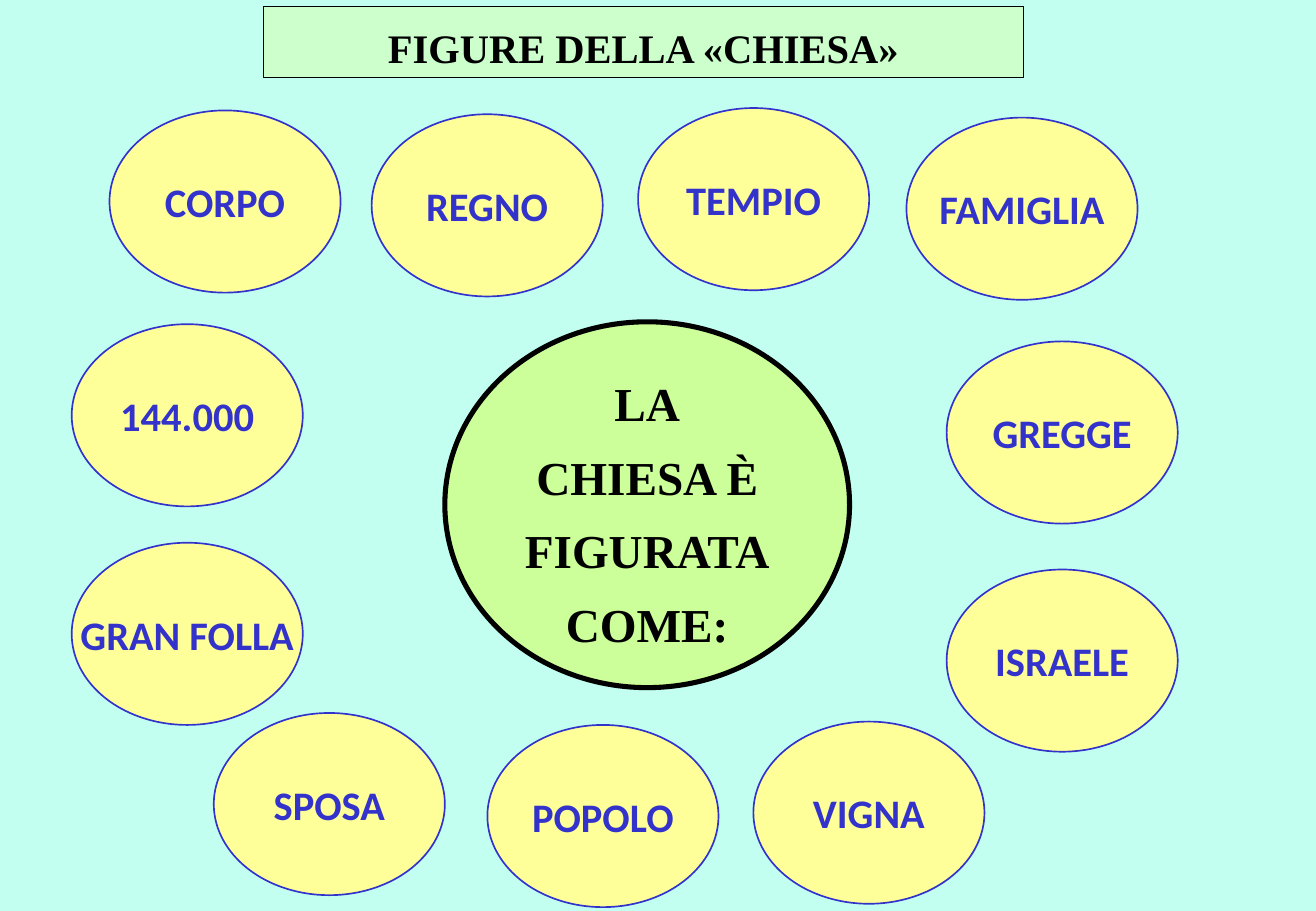
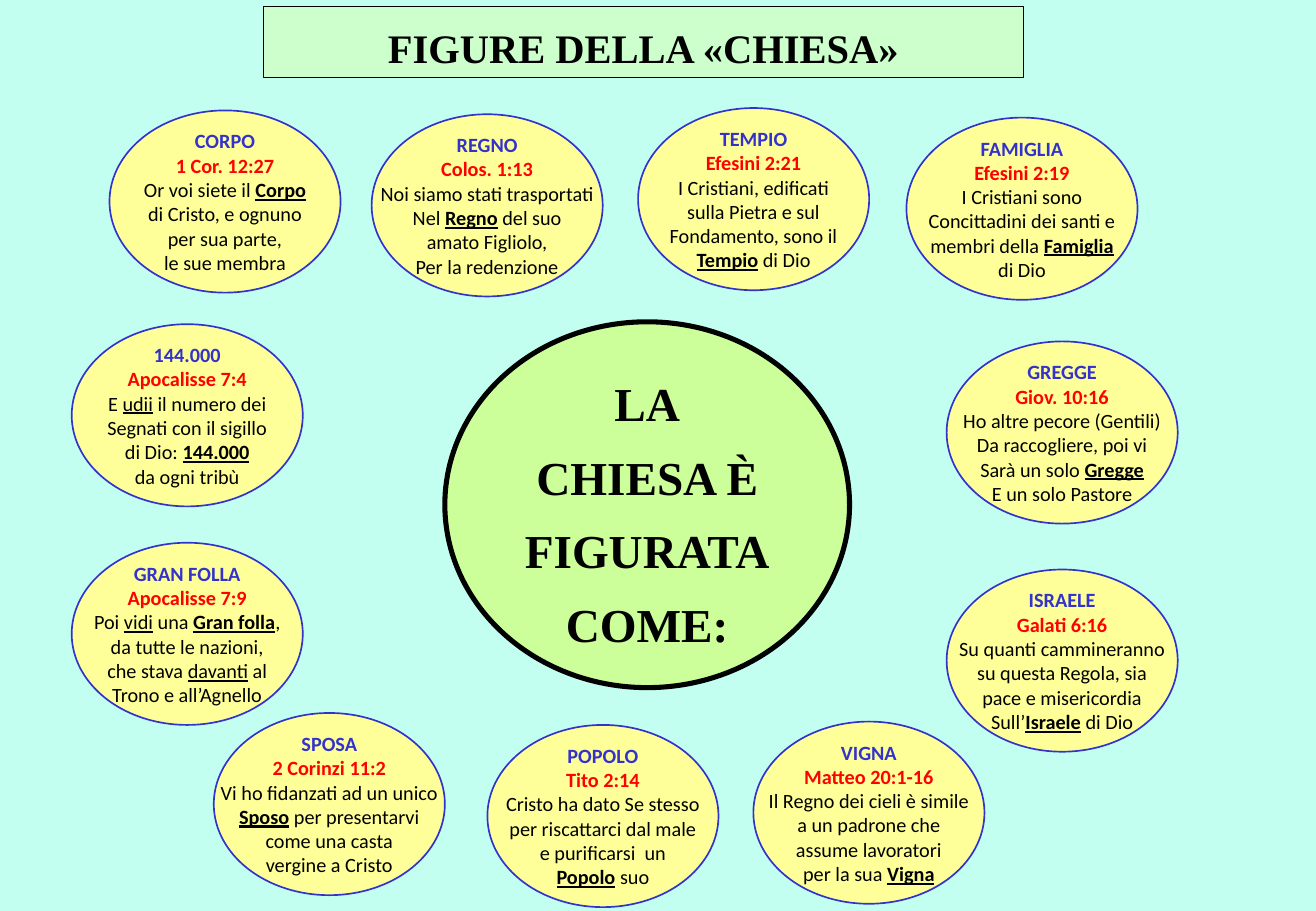
from collections import namedtuple

from pptx import Presentation
from pptx.dml.color import RGBColor
from pptx.enum.shapes import MSO_SHAPE
from pptx.enum.text import MSO_ANCHOR, PP_ALIGN
from pptx.util import Cm, Pt

BLACK = RGBColor(0x00, 0x00, 0x00)
RED = RGBColor(0xFF, 0x00, 0x00)
BLUE = RGBColor(0x33, 0x33, 0xCC)
AQUA = RGBColor(0xC2, 0xFF, 0xF0)
MINT = RGBColor(0xCC, 0xFF, 0xCC)
LIME = RGBColor(0xCC, 0xFF, 0x99)
YELLOW = RGBColor(0xFF, 0xFF, 0x99)
SERIF, SANS = "Times New Roman", "Calibri"

Box = namedtuple("Box", "left top width height")
Figure = namedtuple("Figure", "left top name verse lines")

TITLE_BOX = Box(5.51, 0.13, 15.88, 1.5)
CENTRE_BOX = Box(9.3, 6.73, 8.46, 7.65)
BUBBLE_SIZE = (4.83, 3.81)
TITLE = "FIGURE DELLA «CHIESA»"
CENTRE_LINES = ["LA", "CHIESA È", "FIGURATA", "COME:"]

FIGURES = [
    Figure(19.79, 11.91, "ISRAELE", "Galati 6:16",
           ["Su quanti cammineranno", "su questa Regola, sia",
            "pace e misericordia", "Sull’*Israele* di Dio"]),
    Figure(15.75, 15.09, "VIGNA", "Matteo 20:1-16",
           ["Il Regno dei cieli è simile", "a un padrone che",
            "assume lavoratori", "per la sua *Vigna*"]),
    Figure(10.19, 15.16, "POPOLO", "Tito 2:14",
           ["Cristo ha dato Se stesso", "per riscattarci dal male",
            "e purificarsi  un", "*Popolo* suo"]),
    Figure(4.47, 14.91, "SPOSA", "2 Corinzi 11:2",
           ["Vi ho fidanzati ad un unico", "*Sposo* per presentarvi",
            "come una casta", "vergine a Cristo"]),
    Figure(1.5, 11.35, "GRAN FOLLA", "Apocalisse 7:9",
           ["Poi _vidi_ una *Gran folla*,", "da tutte le nazioni,",
            "che stava _davanti_ al", "Trono e all’Agnello"]),
    Figure(1.5, 6.78, "144.000", "Apocalisse 7:4",
           ["E _udii_ il numero dei", "Segnati con il sigillo",
            "di Dio: *144.000*", "da ogni tribù"]),
    Figure(2.29, 2.31, "CORPO", "1 Cor. 12:27",
           ["Or voi siete il *Corpo*", "di Cristo, e ognuno",
            "per sua parte,", "le sue membra"]),
    Figure(19.79, 7.14, "GREGGE", "Giov. 10:16",
           ["Ho altre pecore (Gentili)", "Da raccogliere, poi vi",
            "Sarà un solo *Gregge*", "E un solo Pastore"]),
    Figure(18.95, 2.46, "FAMIGLIA", "Efesini 2:19",
           ["I Cristiani sono", "Concittadini dei santi e",
            "membri della *Famiglia*", "di Dio"]),
    Figure(7.77, 2.39, "REGNO", "Colos. 1:13",
           ["Noi siamo stati trasportati", "Nel *Regno* del suo",
            "amato Figliolo,", "Per la redenzione"]),
    Figure(13.34, 2.26, "TEMPIO", "Efesini 2:21",
           ["I Cristiani, edificati", "sulla Pietra e sul",
            "Fondamento, sono il", "*Tempio* di Dio"]),
]


def add_panel(page, kind, box, fill, line, weight):
    """Add a filled, outlined shape in the box, given in centimetres."""
    panel = page.shapes.add_shape(kind, *map(Cm, box))
    panel.shadow.inherit = False
    panel.fill.solid()
    panel.fill.fore_color.rgb = fill
    panel.line.color.rgb = line
    panel.line.width = Pt(weight)
    panel.text_frame.word_wrap = False
    panel.text_frame.vertical_anchor = MSO_ANCHOR.MIDDLE
    return panel


def format_span(span, font, size, color, bold=True, underline=False):
    """Set the whole character style of one run."""
    span.font.name = font
    span.font.size = Pt(size)
    span.font.color.rgb = color
    span.font.bold = bold
    span.font.underline = underline


def write_lines(frame, lines, font, size, color, spacing=1.0):
    """Fill the frame with centred bold lines."""
    frame.text = "\n".join(lines)
    for para in frame.paragraphs:
        para.alignment = PP_ALIGN.CENTER
        para.line_spacing = spacing
        for span in para.runs:
            format_span(span, font, size, color)


def split_marks(line):
    """Yield text, bold and underline: *bold underlined*, _underlined_."""
    for star, part in enumerate(line.split("*")):
        for bar, text in enumerate(part.split("_")):
            if text:
                yield text, star % 2 == 1, star % 2 == 1 or bar % 2 == 1


def add_title(page, box):
    """Add the title band."""
    band = add_panel(page, MSO_SHAPE.RECTANGLE, box, MINT, BLACK, 0.75)
    band.text_frame.word_wrap = True
    band.text_frame.vertical_anchor = MSO_ANCHOR.BOTTOM
    write_lines(band.text_frame, [TITLE], SERIF, 24, BLACK, 1.2)


def add_centre(page, box):
    """Add the large central ellipse."""
    ellipse = add_panel(page, MSO_SHAPE.OVAL, box, LIME, BLACK, 3)
    write_lines(ellipse.text_frame, CENTRE_LINES, SERIF, 28, BLACK, 1.3)


def add_bubble(page, box, figure, detailed):
    """Add one figure's ellipse, with its verse when detailed."""
    frame = add_panel(page, MSO_SHAPE.OVAL, box, YELLOW, BLUE, 1).text_frame
    if not detailed:
        write_lines(frame, [figure.name], SANS, 24, BLUE)
        return
    write_lines(frame, [figure.name, figure.verse], SANS, 12, BLUE)
    frame.paragraphs[1].runs[0].font.color.rgb = RED
    for line in figure.lines:
        para = frame.add_paragraph()
        para.alignment = PP_ALIGN.CENTER
        para.line_spacing = 1.0
        for text, bold, underline in split_marks(line):
            span = para.add_run()
            span.text = text
            format_span(span, SANS, 12, BLACK, bold, underline)


def add_figures_page(deck, detailed):
    """Add a slide with the title, the centre and the ring of figures."""
    page = deck.slides.add_slide(deck.slide_layouts[6])
    add_title(page, TITLE_BOX)
    add_centre(page, CENTRE_BOX)
    for figure in FIGURES:
        box = Box(figure.left, figure.top, *BUBBLE_SIZE)
        add_bubble(page, box, figure, detailed)


def main():
    """Build and save the deck."""
    deck = Presentation()
    deck.slide_width, deck.slide_height = Cm(27.51), Cm(19.05)
    backdrop = deck.slide_master.background.fill
    backdrop.solid()
    backdrop.fore_color.rgb = AQUA
    for detailed in (False, True):
        add_figures_page(deck, detailed)
    deck.save("out.pptx")


if __name__ == "__main__":
    main()
